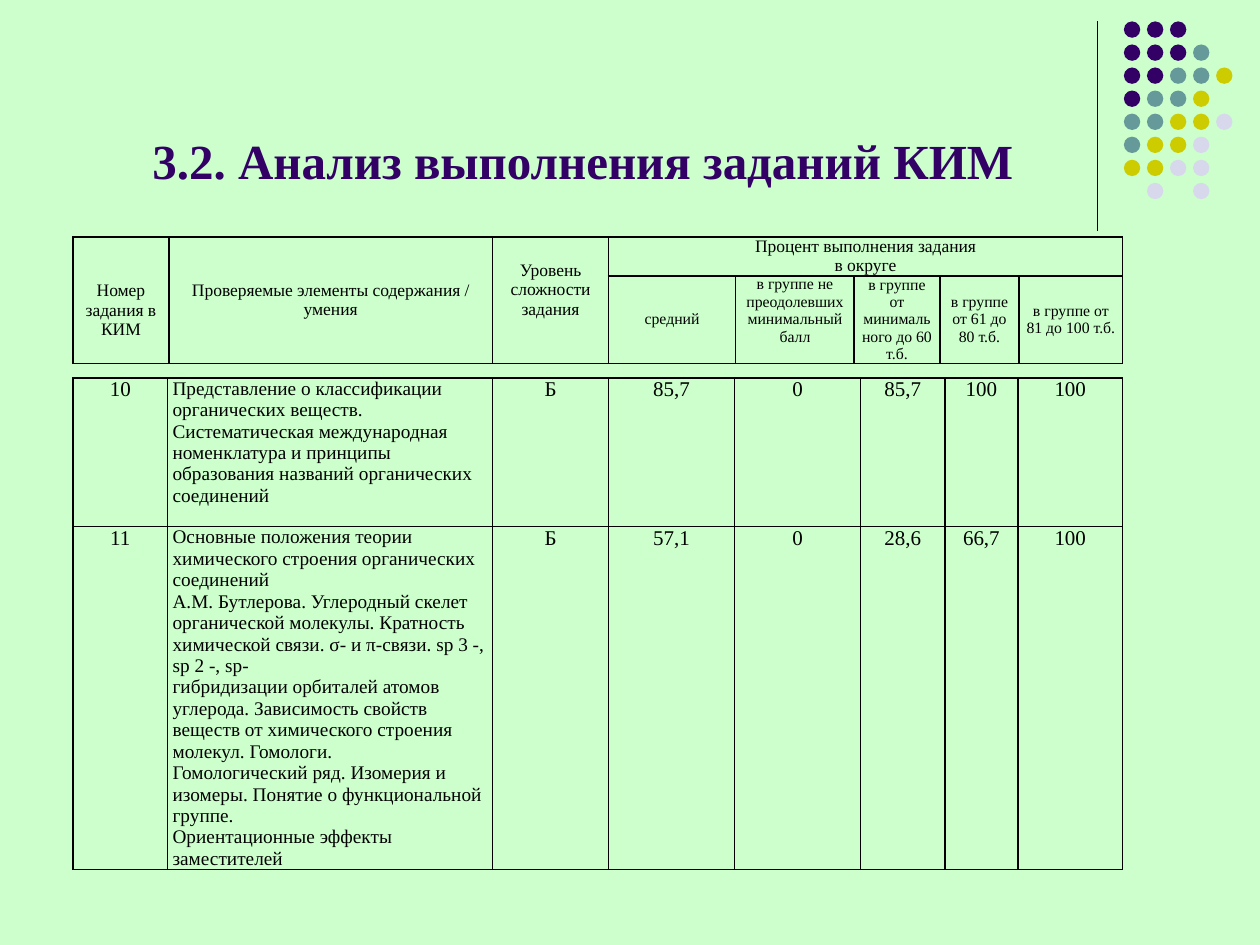
from lxml.etree import SubElement
from pptx import Presentation
from pptx.dml.color import RGBColor
from pptx.enum.shapes import MSO_CONNECTOR, MSO_SHAPE
from pptx.enum.text import MSO_ANCHOR, PP_ALIGN
from pptx.oxml.ns import qn
from pptx.util import Inches, Pt

MINT = RGBColor(0xCC, 0xFF, 0xCC)
PURPLE = RGBColor(0x33, 0x00, 0x66)
TEAL = RGBColor(0x66, 0x99, 0x99)
OLIVE = RGBColor(0xCC, 0xCC, 0x00)
LILAC = RGBColor(0xD8, 0xD8, 0xEC)
BLACK = RGBColor(0, 0, 0)
FONT = "Times New Roman"

TITLE = "3.2. Анализ выполнения заданий КИМ"
DOT_COLORS = {"P": PURPLE, "T": TEAL, "O": OLIVE, "L": LILAC}
DOT_ROWS = ["PPP", "PPPT", "PPTTO", "PTTO", "TTOOL", "TOOL", "OOLL", " L L"]
DOT_LEFT, DOT_TOP, DOT_STEP, DOT_SIZE = 8.92, 0.17, 0.183, 0.13

TABLE_LEFT = 0.58
HEADER_TOP, DATA_TOP = 1.88, 3.0
HEADER_COLUMNS = [0.76, 2.57, 0.92, 1.01, 0.94, 0.68, 0.63, 0.82]
DATA_COLUMNS = [0.75, 2.58, 0.92, 1.0, 1.0, 0.67, 0.58, 0.83]
HEADER_ROWS, DATA_ROWS = [0.31, 0.61], [1.18, 2.72]
BLANK_LINE = 0.16

MAIN_HEADINGS = [
    "Номер\nзадания в КИМ",
    "Проверяемые элементы содержания / умения",
    "Уровень сложности задания",
    "Процент выполнения задания\vв округе",
]
GROUP_HEADINGS = [
    "средний",
    "в группе не преодолевших минимальный балл",
    "в группе от минимального до 60 т.б.",
    "в группе от 61 до 80 т.б.",
    "в группе от 81 до 100 т.б.",
]
TASKS = [
    ["10",
     "Представление о классификации органических веществ. Систематическая "
     "международная номенклатура и принципы образования названий "
     "органических соединений",
     "Б", "85,7", "0", "85,7", "100", "100"],
    ["11",
     "Основные положения теории химического строения органических соединений\n"
     "А.М. Бутлерова. Углеродный скелет органической молекулы. Кратность "
     "химической связи. σ- и π-связи. sp 3 -, sp 2 -, sp-\n"
     "гибридизации орбиталей атомов углерода. Зависимость свойств веществ "
     "от химического строения молекул. Гомологи.\n"
     "Гомологический ряд. Изомерия и изомеры. Понятие о функциональной группе.\n"
     "Ориентационные эффекты заместителей",
     "Б", "57,1", "0", "28,6", "66,7", "100"],
]


def style_font(font, size, color, bold=False):
    for name, value in {"name": FONT, "size": Pt(size), "bold": bold}.items():
        setattr(font, name, value)
    font.color.rgb = color


def outline_cell(cell):
    properties = cell._tc.get_or_add_tcPr()
    for position, side in enumerate(("a:lnL", "a:lnR", "a:lnT", "a:lnB")):
        line = SubElement(properties, qn(side), w=str(Pt(1)))
        fill = SubElement(line, qn("a:solidFill"))
        SubElement(fill, qn("a:srgbClr"), val=str(BLACK))
        properties.remove(line)
        properties.insert(position, line)


def add_grid(page, top, columns, rows):
    """Add an unfilled table with thin black borders and narrow margins."""
    frame = page.shapes.add_table(
        len(rows), len(columns), Inches(TABLE_LEFT), Inches(top),
        Inches(sum(columns)), Inches(sum(rows)))
    table = frame.table
    table.first_row = table.horz_banding = False
    for column, width in zip(table.columns, columns):
        column.width = Inches(width)
    for row, height in zip(table.rows, rows):
        row.height = Inches(height)
    margins = {"margin_left": Inches(0.04), "margin_right": Inches(0.04),
               "margin_top": 0, "margin_bottom": 0}
    for cell in table.iter_cells():
        for name, value in margins.items():
            setattr(cell, name, value)
        cell.fill.background()
        outline_cell(cell)
        cell.text_frame.paragraphs[0].font.size = Pt(1)
    return table


def write_cell(cell, text, size, align=PP_ALIGN.CENTER, anchor=MSO_ANCHOR.TOP):
    cell.text = text
    cell.vertical_anchor = anchor
    for para in cell.text_frame.paragraphs:
        para.alignment = align
        style_font(para.font, size, BLACK)
        for span in para.runs:
            style_font(span.font, size, BLACK)


def add_title(page):
    title = page.shapes.title
    title.left, title.top, title.width, title.height = map(
        Inches, (0.5, 0.13, 8.25, 1.42))
    title.text = TITLE
    title.text_frame.vertical_anchor = MSO_ANCHOR.BOTTOM
    para = title.text_frame.paragraphs[0]
    para.alignment = PP_ALIGN.CENTER
    style_font(para.runs[0].font, 28, PURPLE, bold=True)


def add_corner_decoration(page):
    rule = page.shapes.add_connector(
        MSO_CONNECTOR.STRAIGHT, *map(Inches, (8.71, 0.17, 8.71, 1.83)))
    rule.line.color.rgb = BLACK
    rule.line.width = Pt(0.75)
    SubElement(rule._element.spPr, qn("a:effectLst"))
    for row, codes in enumerate(DOT_ROWS):
        for column, code in enumerate(codes):
            if code == " ":
                continue
            dot = page.shapes.add_shape(
                MSO_SHAPE.OVAL, Inches(DOT_LEFT + column * DOT_STEP),
                Inches(DOT_TOP + row * DOT_STEP),
                Inches(DOT_SIZE), Inches(DOT_SIZE))
            dot.shadow.inherit = False
            dot.fill.solid()
            dot.fill.fore_color.rgb = DOT_COLORS[code]
            dot.line.fill.background()


def add_header_table(page):
    table = add_grid(page, HEADER_TOP, HEADER_COLUMNS, HEADER_ROWS)
    for column in range(3):
        table.cell(0, column).merge(table.cell(1, column))
    table.cell(0, 3).merge(table.cell(0, 7))
    for column, text in enumerate(MAIN_HEADINGS):
        anchor = MSO_ANCHOR.MIDDLE if column < 3 else MSO_ANCHOR.TOP
        write_cell(table.cell(0, column), text, 10, anchor=anchor)
    table.cell(0, 0).margin_top = Inches(BLANK_LINE)
    table.cell(0, 2).margin_bottom = Inches(BLANK_LINE)
    for column, text in enumerate(GROUP_HEADINGS, start=3):
        anchor = MSO_ANCHOR.TOP if column == 4 else MSO_ANCHOR.MIDDLE
        write_cell(table.cell(1, column), text, 9, anchor=anchor)


def add_task_table(page):
    table = add_grid(page, DATA_TOP, DATA_COLUMNS, DATA_ROWS)
    for row, values in enumerate(TASKS):
        for column, text in enumerate(values):
            if column == 1:
                write_cell(table.cell(row, column), text, 11, PP_ALIGN.LEFT)
            else:
                write_cell(table.cell(row, column), text, 12)


def main():
    deck = Presentation()
    deck.slide_width, deck.slide_height = Inches(10), Inches(7.5)
    page = deck.slides.add_slide(deck.slide_layouts[5])
    page.background.fill.solid()
    page.background.fill.fore_color.rgb = MINT
    add_corner_decoration(page)
    add_title(page)
    add_header_table(page)
    add_task_table(page)
    deck.save("out.pptx")


if __name__ == "__main__":
    main()
